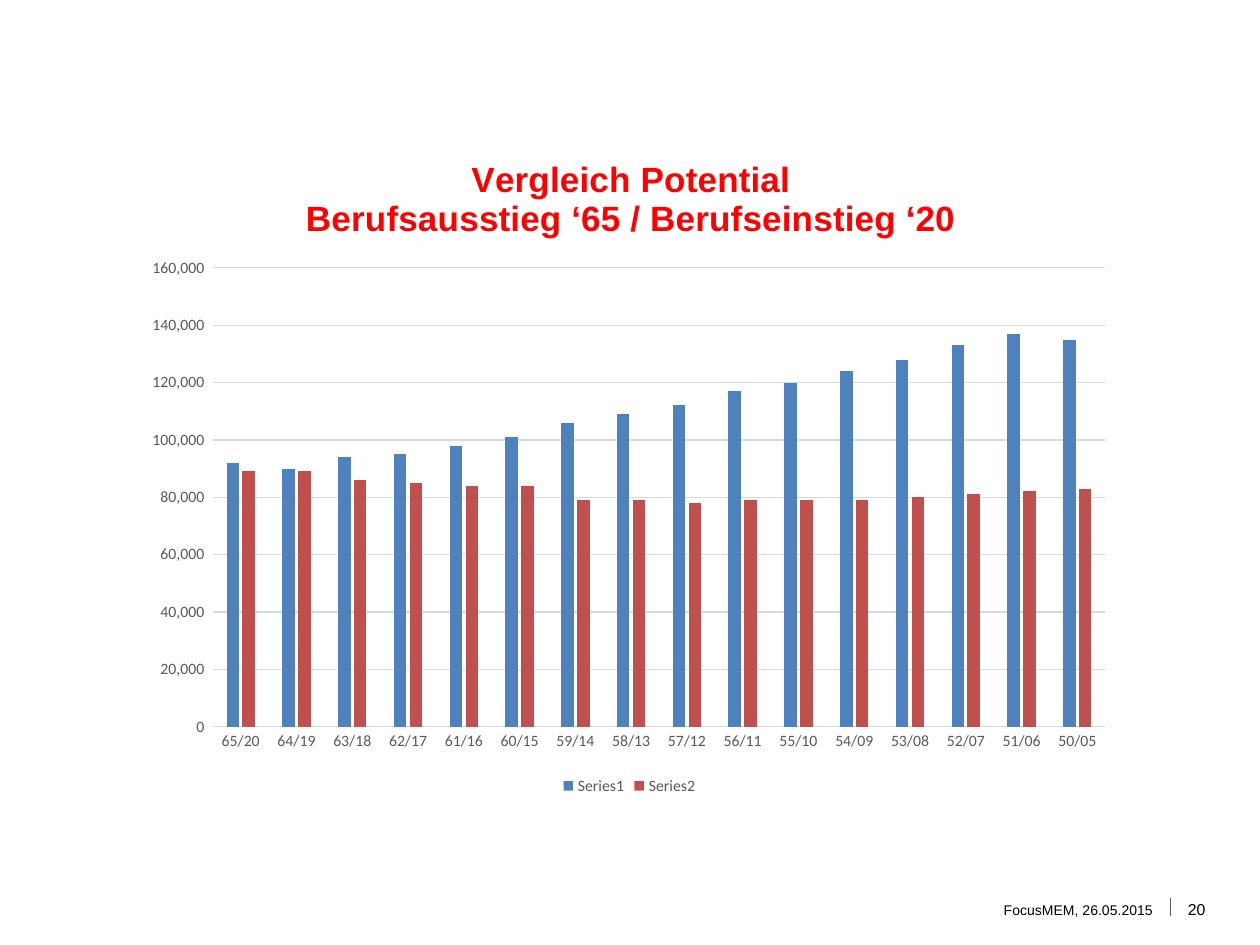
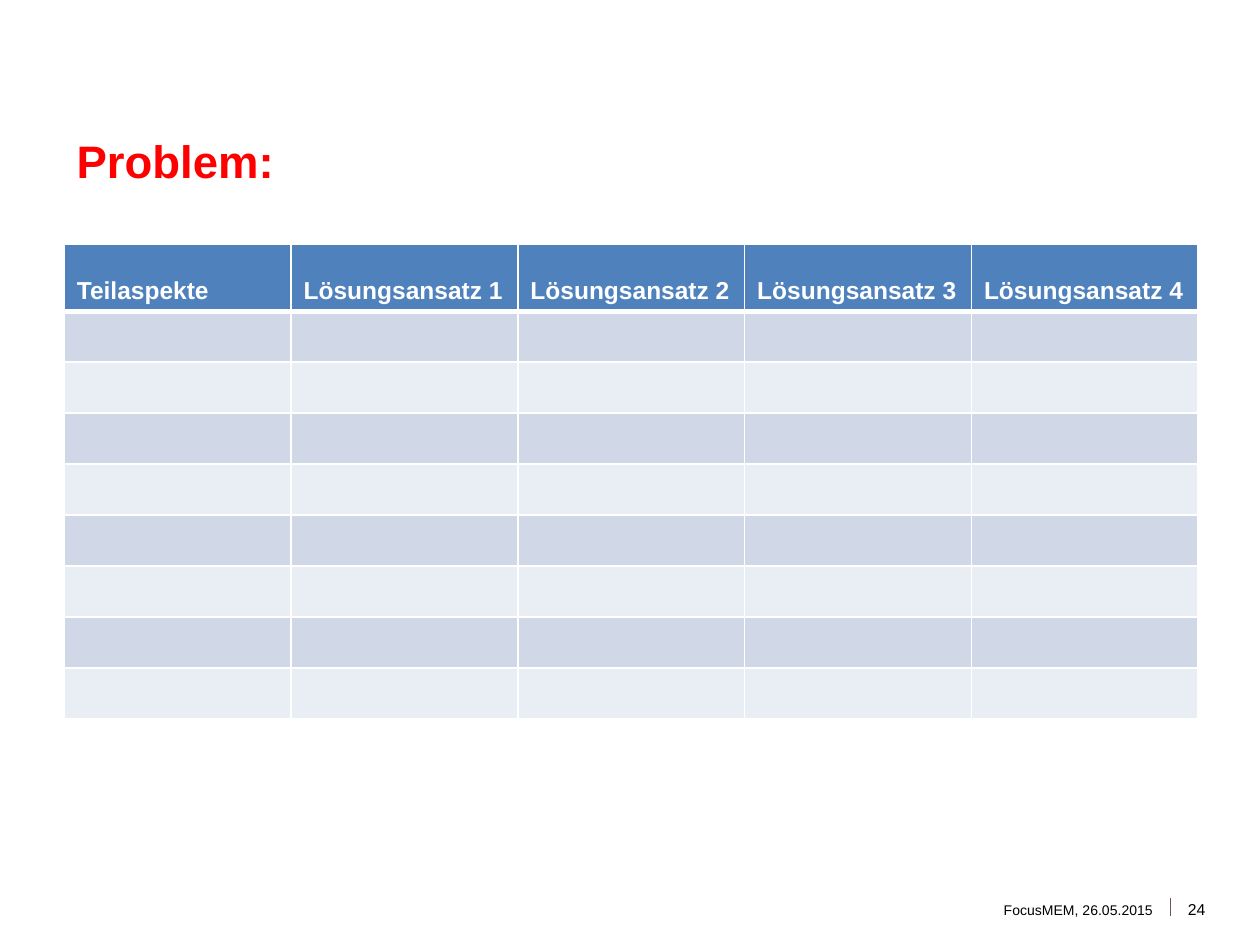
"""Build the comparison chart slide and the problem table slide."""
from dataclasses import dataclass

from lxml import etree
from pptx import Presentation
from pptx.chart.data import CategoryChartData
from pptx.dml.color import RGBColor
from pptx.enum.chart import XL_CHART_TYPE, XL_LEGEND_POSITION, XL_TICK_MARK
from pptx.enum.shapes import MSO_CONNECTOR
from pptx.enum.text import MSO_ANCHOR, PP_ALIGN
from pptx.oxml import parse_xml
from pptx.oxml.ns import nsdecls, qn
from pptx.util import Inches, Pt

COLUMNS = XL_CHART_TYPE.COLUMN_CLUSTERED
LEGEND_BELOW = XL_LEGEND_POSITION.BOTTOM
NO_TICKS = XL_TICK_MARK.NONE
STRAIGHT = MSO_CONNECTOR.STRAIGHT
MIDDLE, BOTTOM = MSO_ANCHOR.MIDDLE, MSO_ANCHOR.BOTTOM
LEFT, RIGHT, CENTER = PP_ALIGN.LEFT, PP_ALIGN.RIGHT, PP_ALIGN.CENTER
WIDTH, HEIGHT = Inches(10), Inches(7.5)


@dataclass(frozen=True)
class Theme:
    """Fonts, colours and type sizes shared by the slides."""
    text_font: str = "Arial"
    chart_font: str = "Calibri"
    accent: str = "FF0000"
    ink: str = "000000"
    white: str = "FFFFFF"
    rule: str = "66585B"
    axis_text: str = "595959"
    grid: str = "D9D9D9"
    series: tuple = ("4F81BD", "C0504D")
    bands: tuple = ("D0D8E8", "E9EDF4")
    title_size: float = 26
    chart_title_size: float = 20
    header_size: float = 14
    axis_size: float = 9
    number_size: float = 9
    footer_size: float = 8


THEME = Theme()
FOOTER = "FocusMEM, 26.05.2015"
CHART_TITLE = ("Vergleich Potential", "Berufsausstieg ‘65 / Berufseinstieg ‘20")
COHORTS = [f"{65 - step}/{20 - step:02d}" for step in range(16)]
POTENTIAL = {
    "Series1": (92, 90, 94, 95, 98, 101, 106, 109,
                112, 117, 120, 124, 128, 133, 137, 135),
    "Series2": (89, 89, 86, 85, 84, 84, 79, 79,
                78, 79, 79, 79, 80, 81, 82, 83),
}
HEADINGS = ["Teilaspekte"] + [f"Lösungsansatz {n}" for n in range(1, 5)]
BODY_ROWS = 8


def across(percent):
    """Return a share of the slide width."""
    return round(WIDTH * percent / 100)


def down(percent):
    """Return a share of the slide height."""
    return round(HEIGHT * percent / 100)


def area(left, top, width, height):
    """Turn percentages of the slide into a position and a size."""
    return across(left), down(top), across(width), down(height)


def style_font(font, size, color, name=THEME.text_font, bold=False):
    """Set the face, size, weight and colour of a font."""
    font.name, font.size, font.bold = name, Pt(size), bold
    font.color.rgb = RGBColor.from_string(color)


def add_run(paragraph, text, size, color, bold=False):
    """Append one styled run to a paragraph."""
    run = paragraph.add_run()
    run.text = text
    style_font(run.font, size, color, bold=bold)


def add_label(slide, place, text, size, color, align=LEFT, bold=False):
    """Add a line of text centred vertically in its area."""
    frame = slide.shapes.add_textbox(*area(*place)).text_frame
    frame.word_wrap = True
    frame.vertical_anchor = MIDDLE
    frame.margin_top = frame.margin_bottom = 0
    frame.paragraphs[0].alignment = align
    add_run(frame.paragraphs[0], text, size, color, bold)


def add_footer(slide, number):
    """Add the dividing rule, the event line and the slide number."""
    rule = slide.shapes.add_connector(
        STRAIGHT, across(92.9), down(95.07), across(92.9), down(96.93))
    rule.line.width = Pt(0.5)
    rule.line.color.rgb = RGBColor.from_string(THEME.rule)
    etree.SubElement(rule._element.spPr, qn("a:effectLst"))
    add_label(slide, (53.9, 95.2, 38.6, 2.13), FOOTER,
              THEME.footer_size, THEME.ink, RIGHT)
    add_label(slide, (93.3, 95.2, 6.3, 2.13), str(number),
              THEME.number_size, THEME.ink)


def set_layout(element, **shares):
    """Fix a chart part at shares of the chart area."""
    target = '<c:layoutTarget val="inner"/>' if "w" in shares else ""
    modes = '<c:xMode val="edge"/><c:yMode val="edge"/>'
    values = "".join(f'<c:{key} val="{value}"/>' for key, value in shares.items())
    layout = parse_xml(f'<c:layout {nsdecls("c")}><c:manualLayout>'
                       f'{target}{modes}{values}</c:manualLayout></c:layout>')
    previous = element.find(qn("c:layout"))
    if previous is not None:
        element.remove(previous)
    text = element.find(qn("c:tx"))
    element.insert(0 if text is None else 1, layout)


def style_axis(axis):
    """Give an axis its type and remove its tick marks."""
    axis.major_tick_mark = axis.minor_tick_mark = NO_TICKS
    style_font(axis.tick_labels.font, THEME.axis_size,
               THEME.axis_text, THEME.chart_font)


def style_hairline(line):
    """Draw a thin light line."""
    line.width = Pt(0.75)
    line.color.rgb = RGBColor.from_string(THEME.grid)


def style_axes(chart):
    """Format the cohort axis, the value axis and its gridlines."""
    cohorts, values = chart.category_axis, chart.value_axis
    style_axis(cohorts)
    style_hairline(cohorts.format.line)
    style_axis(values)
    values.format.line.fill.background()
    values.minimum_scale, values.maximum_scale = 0, 160000
    values.major_unit = 20000
    values.tick_labels.number_format = r"#,##0_);\(#,##0\)"
    values.tick_labels.number_format_is_linked = False
    style_hairline(values.major_gridlines.format.line)


def add_chart_title(chart):
    """Write the title lines above the columns."""
    title = chart.chart_title
    title.include_in_layout = False
    frame = title.text_frame
    for index, text in enumerate(CHART_TITLE):
        paragraph = frame.add_paragraph() if index else frame.paragraphs[0]
        paragraph.alignment = CENTER
        add_run(paragraph, text, THEME.chart_title_size, THEME.accent, True)
    set_layout(title._element, x=0.17, y=0.03)


def add_potential_chart(slide):
    """Add the clustered columns for leavers and entrants."""
    data = CategoryChartData()
    data.categories = COHORTS
    for name, thousands in POTENTIAL.items():
        data.add_series(name, [value * 1000 for value in thousands])
    chart = slide.shapes.add_chart(
        COLUMNS, *area(10.6, 14.27, 78.7, 70.4), data).chart
    style_font(chart.font, 10, THEME.ink, THEME.chart_font)
    add_chart_title(chart)
    style_axes(chart)
    chart.has_legend = True
    chart.legend.position = LEGEND_BELOW
    chart.legend.include_in_layout = False
    style_font(chart.legend.font, THEME.axis_size,
               THEME.axis_text, THEME.chart_font)
    plot = chart.plots[0]
    plot.gap_width, plot.overlap = 219, -27
    plot.vary_by_categories = False
    for series, color in zip(plot.series, THEME.series):
        series.format.fill.solid()
        series.format.fill.fore_color.rgb = RGBColor.from_string(color)
    plot_area = chart._chartSpace.chart.plotArea
    set_layout(plot_area, x=0.08, y=0.2, w=0.9, h=0.69)


def style_cell(cell, color, top=1, bottom=1):
    """Fill a cell and give it white borders."""
    properties = cell._tc.get_or_add_tcPr()
    for side, points in zip("LRTB", (1, 1, top, bottom)):
        properties.append(parse_xml(
            f'<a:ln{side} {nsdecls("a")} w="{Pt(points)}"><a:solidFill>'
            f'<a:srgbClr val="{THEME.white}"/></a:solidFill></a:ln{side}>'))
    cell.fill.solid()
    cell.fill.fore_color.rgb = RGBColor.from_string(color)


def add_solution_table(slide):
    """Add the empty grid of aspects and approaches."""
    header_height, row_height = 7.07, 5.4
    place = area(5.1, 25.87, 90, header_height + BODY_ROWS * row_height)
    table = slide.shapes.add_table(BODY_ROWS + 1, len(HEADINGS), *place).table
    for index, row in enumerate(table.rows):
        row.height = down(row_height if index else header_height)
        for cell in row.cells:
            if index:
                style_cell(cell, THEME.bands[(index - 1) % 2],
                           top=3 if index == 1 else 1)
            else:
                style_cell(cell, THEME.series[0], bottom=3)
    for cell, heading in zip(table.rows[0].cells, HEADINGS):
        cell.vertical_anchor = BOTTOM
        cell.margin_right = Inches(0.05)
        add_run(cell.text_frame.paragraphs[0], heading,
                THEME.header_size, THEME.white, True)


def add_slide(deck, number):
    """Add a blank slide with the shared footer."""
    slide = deck.slides.add_slide(deck.slide_layouts[6])
    add_footer(slide, number)
    return slide


def main():
    """Build and save both slides."""
    deck = Presentation()
    deck.slide_width, deck.slide_height = WIDTH, HEIGHT
    add_potential_chart(add_slide(deck, 20))
    problem = add_slide(deck, 24)
    add_label(problem, (5.1, 13.2, 90, 7.47), "Problem:",
              THEME.title_size, THEME.accent, bold=True)
    add_solution_table(problem)
    deck.save("out.pptx")


if __name__ == "__main__":
    main()
